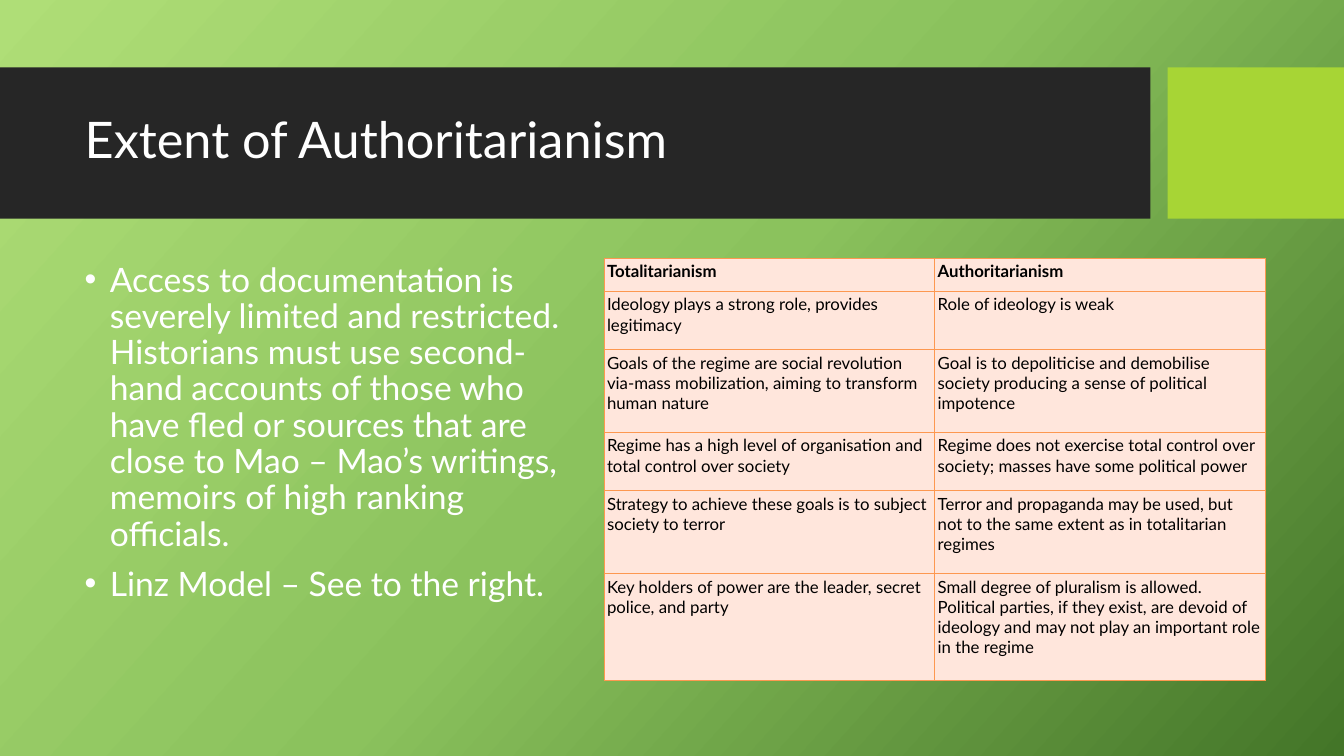
from lxml.etree import SubElement
from pptx import Presentation
from pptx.dml.color import RGBColor
from pptx.enum.shapes import MSO_SHAPE
from pptx.enum.text import MSO_ANCHOR, MSO_AUTO_SIZE, PP_ALIGN
from pptx.oxml import parse_xml
from pptx.oxml.ns import nsdecls, qn
from pptx.util import Inches, Pt

WIDE, HIGH = Inches(13.33), Inches(7.5)
TITLE = "Extent of Authoritarianism"
POINTS = [
    "Access to documentation is severely limited and restricted. Historians must use second-hand accounts of those who have fled or sources that are close to Mao – Mao’s writings, memoirs of high ranking officials.",
    "Linz Model – See to the right.",
]
MODEL = [
    (4.4, "Totalitarianism", "Authoritarianism"),
    (7.73, "Ideology plays a strong role, provides legitimacy", "Role of ideology is weak"),
    (10.93, "Goals of the regime are social revolution via-mass mobilization, aiming to transform human nature",
     "Goal is to depoliticise and demobilise society producing a sense of political impotence"),
    (7.73, "Regime has a high level of organisation and total control over society",
     "Regime does not exercise total control over society; masses have some political power"),
    (10.93, "Strategy to achieve these goals is to subject society to terror",
     "Terror and propaganda may be used, but not to the same extent as in totalitarian regimes"),
    (14.2, "Key holders of power are the leader, secret police, and party",
     "Small degree of pluralism is allowed. Political parties, if they exist, are devoid of ideology and may not play an important role in the regime"),
]


def color(code):
    return RGBColor.from_string(code)


def apply(item, values):
    for name, value in values.items():
        setattr(item, name, value)


def across(share):
    return round(WIDE * share / 100)


def down(share):
    return round(HIGH * share / 100)


def frame(x, y, w, h):
    return across(x), down(y), across(w), down(h)


class Deck:
    face = "Lato"
    light, dark, lime = "FFFFFF", "262626", "A7D535"
    ink, pale, edge = "000000", "FFE6DC", "FD9850"
    stops = [(0, "AFDE77"), (50, "8BC25D"), (100, "437528")]

    def __init__(self):
        self.file = Presentation()
        apply(self.file, {"slide_width": WIDE, "slide_height": HIGH})
        self.slide = self.file.slides.add_slide(self.file.slide_layouts[1])

    def font(self, para, size, code, bold=False):
        apply(para.font, {"name": self.face, "size": Pt(size), "bold": bold})
        para.font.color.rgb = color(code)

    def back(self, angle):
        fill = self.slide.background.fill
        fill.gradient()
        fill.gradient_angle = 360 - angle
        ramp = self.slide.element.find(".//" + qn("a:gsLst"))
        for old in list(ramp):
            ramp.remove(old)
        for place, code in self.stops:
            stop = SubElement(ramp, qn("a:gs"), pos=str(place * 1000))
            SubElement(stop, qn("a:srgbClr"), val=code)

    def bar(self, area, code):
        shape = self.slide.shapes.add_shape(MSO_SHAPE.RECTANGLE, *frame(*area))
        shape.shadow.inherit = False
        shape.fill.solid()
        shape.fill.fore_color.rgb = color(code)
        shape.line.fill.background()
        self.slide.shapes.title.element.addprevious(shape.element)

    def place(self, holder, area, anchor):
        apply(holder, dict(zip(("left", "top", "width", "height"), frame(*area))))
        apply(holder.text_frame, {"word_wrap": True, "auto_size": MSO_AUTO_SIZE.NONE,
                                  "vertical_anchor": anchor})
        return holder.text_frame

    def title(self, text, area):
        box = self.place(self.slide.shapes.title, area, MSO_ANCHOR.MIDDLE)
        box.text = text
        para = box.paragraphs[0]
        apply(para, {"alignment": PP_ALIGN.LEFT, "line_spacing": 0.9})
        self.font(para, 36, self.light)

    def points(self, lines, area):
        box = self.place(self.slide.placeholders[1], area, MSO_ANCHOR.TOP)
        box.text = "\n".join(lines)
        for spot, para in enumerate(box.paragraphs):
            apply(para, {"line_spacing": 0.9, "space_before": Pt(10 if spot else 0)})
            props = para._p.get_or_add_pPr()
            props.set("marL", str(Inches(0.25)))
            props.set("indent", str(-Inches(0.25)))
            SubElement(props, qn("a:buFont"), typeface="Arial")
            SubElement(props, qn("a:buChar"), char="•")
            self.font(para, 24, self.light)

    def border(self, cell):
        props = cell._tc.get_or_add_tcPr()
        for spot, side in enumerate("LRTB"):
            props.insert(spot, parse_xml(
                f'<a:ln{side} {nsdecls("a")} w="{Pt(0.75)}"><a:solidFill>'
                f'<a:srgbClr val="{self.edge}"/></a:solidFill></a:ln{side}>'))

    def table(self, data, x, y, w):
        high = sum(row[0] for row in data)
        count = len(data[0]) - 1
        grid = self.slide.shapes.add_table(len(data), count, *frame(x, y, w, high)).table
        apply(grid, {"first_row": False, "horz_banding": False})
        for col in grid.columns:
            col.width = across(w / count)
        for spot, (tall, *texts) in enumerate(data):
            grid.rows[spot].height = down(tall)
            for side, text in enumerate(texts):
                cell = grid.cell(spot, side)
                cell.text = text
                apply(cell, {f"margin_{edge}": Inches(0.03)
                             for edge in ("left", "right", "top", "bottom")})
                cell.fill.solid()
                cell.fill.fore_color.rgb = color(self.pale)
                self.border(cell)
                self.font(cell.text_frame.paragraphs[0], 12, self.ink, spot == 0)


def main():
    deck = Deck()
    deck.back(42)
    deck.bar((0, 8.93, 85.6, 20), deck.dark)
    deck.bar((86.87, 8.93, 13.13, 20), deck.lime)
    deck.title(TITLE, (5.55, 10.93, 78.84, 15.73))
    deck.points(POINTS, (5.55, 34.13, 38.56, 52.53))
    deck.table(MODEL, 44.94, 34.13, 49.21)
    deck.file.save("out.pptx")


if __name__ == "__main__":
    main()
